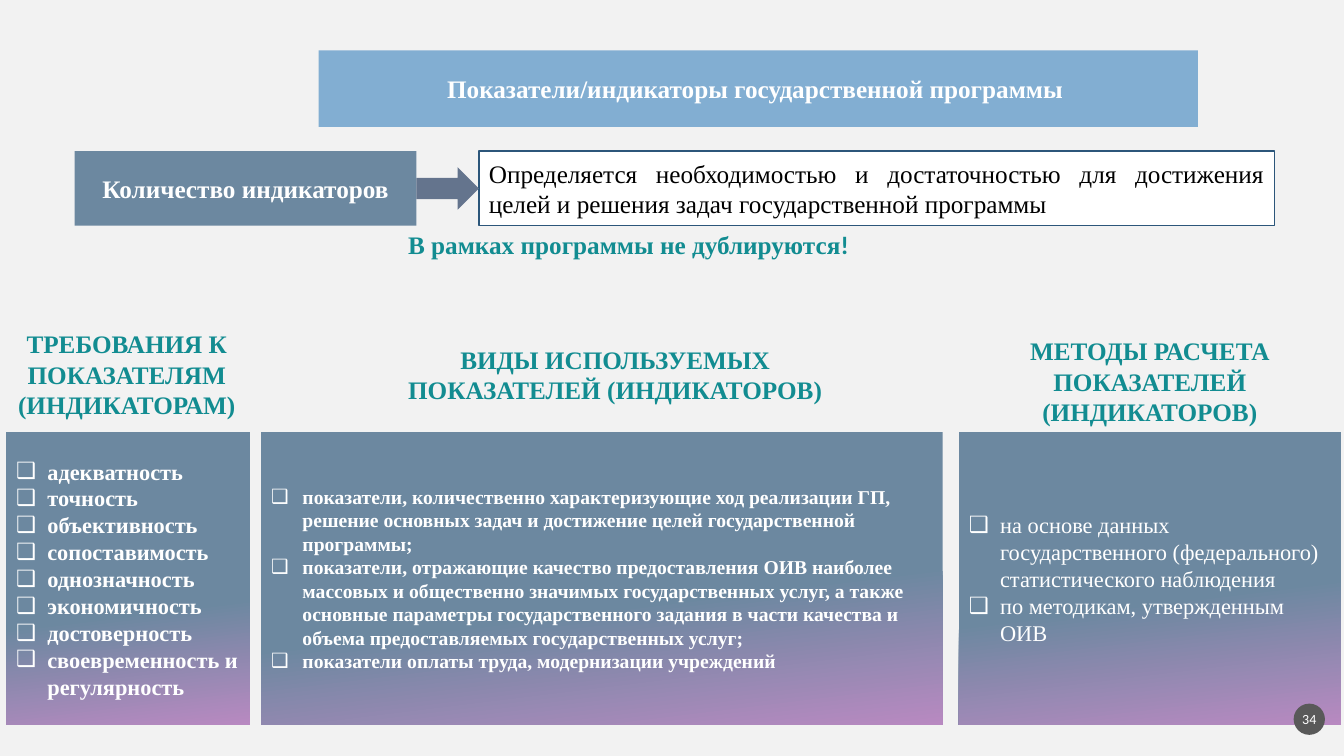
from collections import namedtuple

from lxml import etree
from pptx import Presentation
from pptx.dml.color import RGBColor
from pptx.enum.shapes import MSO_SHAPE
from pptx.enum.text import MSO_ANCHOR, MSO_AUTO_SIZE, PP_ALIGN
from pptx.oxml.ns import qn
from pptx.util import Inches, Pt

RECT, ARROW, OVAL = MSO_SHAPE.RECTANGLE, MSO_SHAPE.RIGHT_ARROW, MSO_SHAPE.OVAL
LEFT, CENTER, JUSTIFY = PP_ALIGN.LEFT, PP_ALIGN.CENTER, PP_ALIGN.JUSTIFY
TOP, MIDDLE = MSO_ANCHOR.TOP, MSO_ANCHOR.MIDDLE
COMPARISON_LAYOUT = 4
SERIF, SANS = "Times New Roman", "Calibri"
INDENT = Inches(0.31)
GRADIENT_ANGLE = 277

COLORS = {
    "background": "F2F2F2", "banner": "82AED2", "slate": "6C88A0",
    "lilac": "B889C1", "arrow": "64748D", "outline": "2C567A",
    "teal": "128C91", "badge": "595959", "white": "FFFFFF", "black": "000000",
}

Box = namedtuple("Box", "left top width height")

# Heading places are percentages of the panel below them.
COLUMNS = [
    dict(
        place=(0.45, 57.2, 18.15, 38.67), heading_place=(-1, -37.2, 101, 35),
        heading="ТРЕБОВАНИЯ К ПОКАЗАТЕЛЯМ (ИНДИКАТОРАМ)",
        solid_until=0.61, size=16, bold=True,
        items=["адекватность", "точность", "объективность", "сопоставимость",
               "однозначность", "экономичность", "достоверность",
               "своевременность и регулярность"],
    ),
    dict(
        place=(19.43, 57.2, 50.71, 38.67), heading_place=(18.6, -32, 66.7, 24.5),
        heading="ВИДЫ ИСПОЛЬЗУЕМЫХ ПОКАЗАТЕЛЕЙ (ИНДИКАТОРОВ)",
        solid_until=0.58, size=14, bold=True,
        items=["показатели, количественно характеризующие ход реализации ГП, "
               "решение основных задач и достижение целей государственной программы;",
               "показатели, отражающие качество предоставления ОИВ наиболее "
               "массовых и общественно значимых государственных услуг, а также "
               "основные параметры государственного задания в части качества и "
               "объема предоставляемых государственных услуг;",
               "показатели оплаты труда, модернизации учреждений"],
    ),
    dict(
        place=(71.34, 57.2, 28.43, 38.67), heading_place=(-2.9, -34.8, 105.8, 35),
        heading="МЕТОДЫ РАСЧЕТА ПОКАЗАТЕЛЕЙ (ИНДИКАТОРОВ)",
        solid_until=0.57, size=16, bold=False,
        items=["на основе данных государственного (федерального) "
               "статистического наблюдения",
               "по методикам, утвержденным ОИВ"],
    ),
]


def color(name):
    return RGBColor.from_string(COLORS[name])


def part(box, left, top, width, height):
    """Box inside another one, in percent of its size."""
    return Box(round(box.left + box.width * left / 100),
               round(box.top + box.height * top / 100),
               round(box.width * width / 100),
               round(box.height * height / 100))


def apply(target, settings):
    for name, value in settings.items():
        setattr(target, name, value)


def paint(shape, fill, line=None):
    shape.fill.solid()
    shape.fill.fore_color.rgb = color(fill)
    if line:
        shape.line.color.rgb = color(line)
        shape.line.width = Pt(1)
    else:
        shape.line.fill.background()


def add_bullet(paragraph):
    properties = paragraph._p.get_or_add_pPr()
    for name, value in {"marL": INDENT, "indent": -INDENT}.items():
        properties.set(name, str(value))
    etree.SubElement(properties, qn("a:buChar")).set("char", "❑")


def write(shape, lines, ink="white", size=18, bold=True, font=SERIF,
          align=CENTER, anchor=MIDDLE, bulleted=False):
    frame = shape.text_frame
    apply(frame, {"word_wrap": True, "auto_size": MSO_AUTO_SIZE.NONE,
                  "vertical_anchor": anchor})
    for number, line in enumerate(lines):
        paragraph = frame.add_paragraph() if number else frame.paragraphs[0]
        apply(paragraph, {"alignment": align, "space_before": Pt(0)})
        if bulleted:
            add_bullet(paragraph)
        run = paragraph.add_run()
        run.text = line
        apply(run.font, {"name": font, "size": Pt(size), "bold": bold})
        run.font.color.rgb = color(ink)


def add_block(slide, kind, box, fill, line=None):
    block = slide.shapes.add_shape(kind, *box)
    block.shadow.inherit = False
    paint(block, fill, line)
    return block


def add_caption(slide, box, text, align=CENTER):
    caption = slide.shapes.add_textbox(*box)
    write(caption, [text], ink="teal", align=align, anchor=TOP)
    return caption


def fill_banner(title, box):
    apply(title, box._asdict())
    paint(title, "banner")
    write(title, ["Показатели/индикаторы государственной программы "])


def add_quantity_row(slide, box):
    label_share, arrow_share = 28.5, 5.2
    rule_left = label_share + arrow_share
    label = add_block(slide, RECT, part(box, 0, 0, label_share, 100), "slate")
    write(label, ["Количество индикаторов"])
    rule = add_block(slide, RECT, part(box, rule_left, 0, 100 - rule_left, 100),
                     "white", "outline")
    write(rule, ["Определяется необходимостью и достаточностью для достижения "
                 "целей и решения задач государственной программы"],
          ink="black", bold=False, align=JUSTIFY)
    add_block(slide, ARROW, part(box, label_share, 21.5, arrow_share, 57), "arrow")


def add_warning(slide, box):
    warning = add_caption(slide, box, "В рамках программы не дублируются", LEFT)
    mark = warning.text_frame.paragraphs[0].add_run()
    mark.text = "!"
    apply(mark.font, {"name": SANS, "size": Pt(18), "bold": True})
    mark.font.color.rgb = color("teal")


def add_column(slide, panel, box, column):
    apply(panel, box._asdict())
    panel.fill.gradient()
    panel.fill.gradient_angle = GRADIENT_ANGLE
    ends = [(column["solid_until"], "slate"), (1, "lilac")]
    for stop, (position, name) in zip(panel.fill.gradient_stops, ends):
        stop.position = position
        stop.color.rgb = color(name)
    write(panel, column["items"], size=column["size"], bold=column["bold"],
          align=LEFT, bulleted=True)
    add_caption(slide, part(box, *column["heading_place"]), column["heading"])


def add_page_badge(slide, box):
    badge = add_block(slide, OVAL, box, "badge")
    apply(badge.text_frame, dict.fromkeys(
        ["margin_left", "margin_top", "margin_right", "margin_bottom"], 0))
    write(badge, ["34"], size=10, bold=False, font=SANS)


def main():
    deck = Presentation()
    deck.slide_width, deck.slide_height = Inches(13.33), Inches(7.5)
    page = Box(0, 0, deck.slide_width, deck.slide_height)
    slide = deck.slides.add_slide(deck.slide_layouts[COMPARISON_LAYOUT])
    slide.background.fill.solid()
    slide.background.fill.fore_color.rgb = color("background")
    title, *panels, spare = slide.placeholders
    spare.element.getparent().remove(spare.element)

    fill_banner(title, part(page, 23.71, 6.67, 65.42, 10.13))
    add_quantity_row(slide, part(page, 5.55, 20, 89.27, 9.87))
    add_warning(slide, part(page, 29.63, 29.73, 34.66, 5.33))
    for panel, column in zip(panels, COLUMNS):
        add_column(slide, panel, part(page, *column["place"]), column)
    add_page_badge(slide, part(page, 96.25, 93.07, 2.33, 4.13))
    deck.save("out.pptx")


if __name__ == "__main__":
    main()
